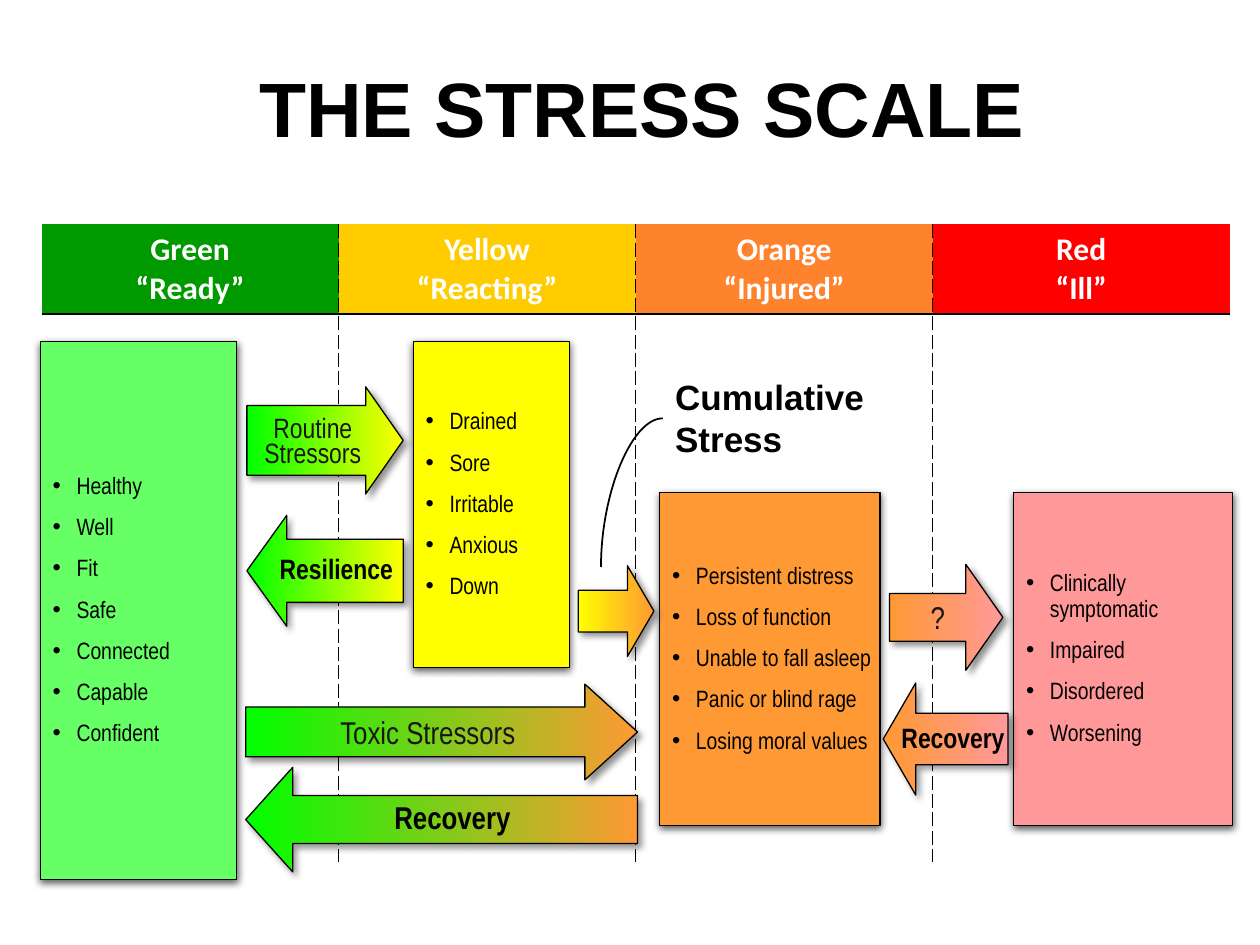
from lxml.etree import SubElement
from pptx import Presentation
from pptx.dml.color import RGBColor
from pptx.enum.shapes import MSO_CONNECTOR as Link, MSO_SHAPE as Shape
from pptx.enum.text import MSO_ANCHOR as Anchor, MSO_AUTO_SIZE as AutoSize, PP_ALIGN as Align
from pptx.oxml.ns import qn
from pptx.util import Inches, Pt

COLUMNS, ROWS = 100, 75
CELL = 0.1
NARROW = "Arial Narrow"
BLACK, WHITE, DARK = "000000", "FFFFFF", "161616"
GREEN, YELLOW, ORANGE, PINK = "00FF00", "FFFF00", "FF9933", "FF9999"
PLAIN_TABLE = "{2D5ABB26-0587-4C30-8999-92F81FD0307C}"

STAGES = [
    ("Green", "“Ready”", "009900"),
    ("Yellow", "“Reacting”", "FFCC00"),
    ("Orange", "“Injured”", "FF822D"),
    ("Red", "“Ill”", "FF0000"),
]
SYMPTOMS = [
    ((3.2, 27.1, 15.6, 42.7), "66FF66", False,
     ["Healthy", "Well", "Fit", "Safe", "Connected", "Capable", "Confident"]),
    ((32.8, 27.1, 12.4, 25.9), YELLOW, False,
     ["Drained", "Sore", "Irritable", "Anxious", "Down"]),
    ((52.35, 39.1, 17.5, 26.4), ORANGE, False,
     ["Persistent distress", "Loss of function", "Unable to fall asleep",
      "Panic or blind rage", "Losing moral values"]),
    ((80.45, 39.1, 17.4, 26.4), PINK, True,
     ["Clinically symptomatic", "Impaired", "Disordered", "Worsening"]),
]
STRESSORS = [
    ((19.6, 30.7, 12.4, 8.5), (0.65, 0.35), (GREEN, YELLOW), "Routine Stressors", 16, 0),
    ((19.5, 54.3, 31.1, 7.6), (0.52, 0.55), (GREEN, ORANGE), "Toxic Stressors", 18, 3),
    ((45.9, 44.9, 6, 7.2), (0.46, 0.35), (YELLOW, ORANGE), "", 18, 0),
    ((70.6, 44.8, 9, 8.4), (0.45, 0.35), (ORANGE, PINK), "?", 18, 0),
]
RECOVERIES = [
    ((19.6, 40.9, 12.4, 8.8), (0.57, 0.36), (GREEN, YELLOW), "Resilience", 16),
    ((19.5, 60.9, 31.1, 8.3), (0.46, 0.45), (GREEN, ORANGE), "Recovery", 18),
    ((70.1, 54.2, 9.9, 8.9), (0.46, 0.29), (ORANGE, PINK), "Recovery", 16),
]


def color(value):
    return RGBColor.from_string(value)


def grid(*cells):
    return [Inches(cell * CELL) for cell in cells]


def add_span(para, text, size, font, shade, bold=False):
    span = para.add_run()
    span.text = text
    span.font.size = Pt(size)
    span.font.name = font
    span.font.bold = bold
    span.font.color.rgb = color(shade)


def next_para(frame, index):
    return frame.add_paragraph() if index else frame.paragraphs[0]


def hang(para, inches):
    props = para._p.get_or_add_pPr()
    props.set("marL", str(Inches(inches)))
    props.set("indent", str(-Inches(inches)))
    return props


def add_bullet(para):
    props = hang(para, 0.19)
    SubElement(SubElement(props, qn("a:buClr")), qn("a:srgbClr"), val=BLACK)
    SubElement(props, qn("a:buFont"), typeface="Arial")
    SubElement(props, qn("a:buChar"), char="•")


def cast_shadow(shape, alpha, blur, distance, angle):
    shape.shadow.inherit = False
    effects = shape._element.spPr.find(qn("a:effectLst"))
    shadow = SubElement(effects, qn("a:outerShdw"), blurRad=str(Pt(blur)),
                        dist=str(Pt(distance)), dir=str(angle * 60000), rotWithShape="0")
    tint = SubElement(shadow, qn("a:srgbClr"), val=BLACK)
    SubElement(tint, qn("a:alpha"), val=str(alpha * 1000))


def add_outlined(page, kind, place):
    shape = page.shapes.add_shape(kind, *grid(*place))
    shape.line.color.rgb = color(BLACK)
    shape.line.width = Pt(0.75)
    return shape


def add_border(cell, side, dashed):
    line = SubElement(cell._tc.get_or_add_tcPr(), qn(f"a:ln{side}"), w=str(Pt(1)))
    SubElement(SubElement(line, qn("a:solidFill")), qn("a:srgbClr"), val=BLACK)
    SubElement(line, qn("a:prstDash"), val="sysDash" if dashed else "solid")


def add_scale(page):
    heights = grid(5.8, 7.1, 43.5)
    count = len(STAGES)
    table = page.shapes.add_table(len(heights), count, *grid(3.3, 12, 94.3, 56.4)).table
    table.first_row = table.horz_banding = False
    table._tbl.tblPr.find(qn("a:tableStyleId")).text = PLAIN_TABLE
    for row, height in zip(table.rows, heights):
        row.height = height
    table.cell(0, 0).merge(table.cell(0, count - 1))
    for column, (name, state, shade) in enumerate(STAGES):
        header, lane = table.cell(1, column), table.cell(2, column)
        for cell, edge in ((header, "B"), (lane, "T")):
            if column:
                add_border(cell, "L", True)
            if column < count - 1:
                add_border(cell, "R", True)
            add_border(cell, edge, False)
        header.fill.solid()
        header.fill.fore_color.rgb = color(shade)
        lane.fill.background()
        header.vertical_anchor = Anchor.MIDDLE
        for index, text in enumerate((name, state)):
            para = next_para(header.text_frame, index)
            para.alignment = Align.CENTER
            add_span(para, text, 18, "Calibri", WHITE, True)


def add_symptoms(page, place, shade, wrap, items):
    box = add_outlined(page, Shape.RECTANGLE, place)
    box.fill.solid()
    box.fill.fore_color.rgb = color(shade)
    cast_shadow(box, 63, 4.5, 1.5, 90)
    frame = box.text_frame
    frame.word_wrap = wrap
    frame.vertical_anchor = Anchor.MIDDLE
    for index, item in enumerate(items):
        para = next_para(frame, index)
        para.alignment = Align.LEFT
        para.line_spacing = 0.9
        para.space_before = Pt(9)
        add_bullet(para)
        add_span(para, item, 13.5, NARROW, BLACK)


def add_arrow(page, kind, place, bends, shades, alpha):
    arrow = add_outlined(page, kind, place)
    for index, bend in enumerate(bends):
        arrow.adjustments[index] = bend
    arrow.fill.gradient()
    arrow.fill.gradient_angle = 0
    for stop, shade in zip(arrow.fill.gradient_stops, shades):
        stop.color.rgb = color(shade)
    cast_shadow(arrow, alpha, 4, 3, 45)
    return arrow


def add_stressor(page, place, bends, shades, text, size, before):
    frame = add_arrow(page, Shape.RIGHT_ARROW, place, bends, shades, 43).text_frame
    if not text:
        return
    frame.vertical_anchor = Anchor.BOTTOM
    para = frame.paragraphs[0]
    para.alignment = Align.CENTER
    para.line_spacing = 0.75
    para.space_before = Pt(before)
    add_span(para, text, size, NARROW, DARK)


def add_recovery(page, place, bends, shades, text, size):
    frame = add_arrow(page, Shape.LEFT_ARROW, place, bends, shades, 40).text_frame
    frame.word_wrap = False
    frame.vertical_anchor = Anchor.MIDDLE
    para = frame.paragraphs[0]
    para.alignment = Align.CENTER
    para.line_spacing = 0.9
    hang(para, 0.37)
    add_span(para, text, size, NARROW, BLACK, True)


def add_callout(page):
    box = page.shapes.add_textbox(*grid(52.6, 29.3, 18, 7.7))
    box.text_frame.word_wrap = True
    box.text_frame.auto_size = AutoSize.SHAPE_TO_FIT_TEXT
    add_span(box.text_frame.paragraphs[0], "Cumulative Stress", 20, "Arial", BLACK, True)
    curve = page.shapes.add_connector(Link.CURVE, *grid(52.6, 33.2, 47.7, 45))
    curve.line.color.rgb = color(BLACK)
    curve.line.width = Pt(1)
    props = curve._element.spPr
    props.find(qn("a:prstGeom")).set("prst", "curvedConnector2")
    SubElement(props, qn("a:effectLst"))


def add_title(page):
    title = page.shapes.title
    title.left, title.top, title.width, title.height = grid(4.3, 2.8, 93.4, 12.3)
    title.text_frame.vertical_anchor = Anchor.MIDDLE
    para = title.text_frame.paragraphs[0]
    para.alignment = Align.CENTER
    para.line_spacing = 0.9
    add_span(para, "THE STRESS SCALE", 44, "Arial", BLACK, True)


def main():
    deck = Presentation()
    deck.slide_width, deck.slide_height = grid(COLUMNS, ROWS)
    page = deck.slides.add_slide(deck.slide_layouts[5])
    add_title(page)
    add_scale(page)
    for symptoms in SYMPTOMS:
        add_symptoms(page, *symptoms)
    for stressor in STRESSORS:
        add_stressor(page, *stressor)
    for recovery in RECOVERIES:
        add_recovery(page, *recovery)
    add_callout(page)
    deck.save("out.pptx")


if __name__ == "__main__":
    main()
